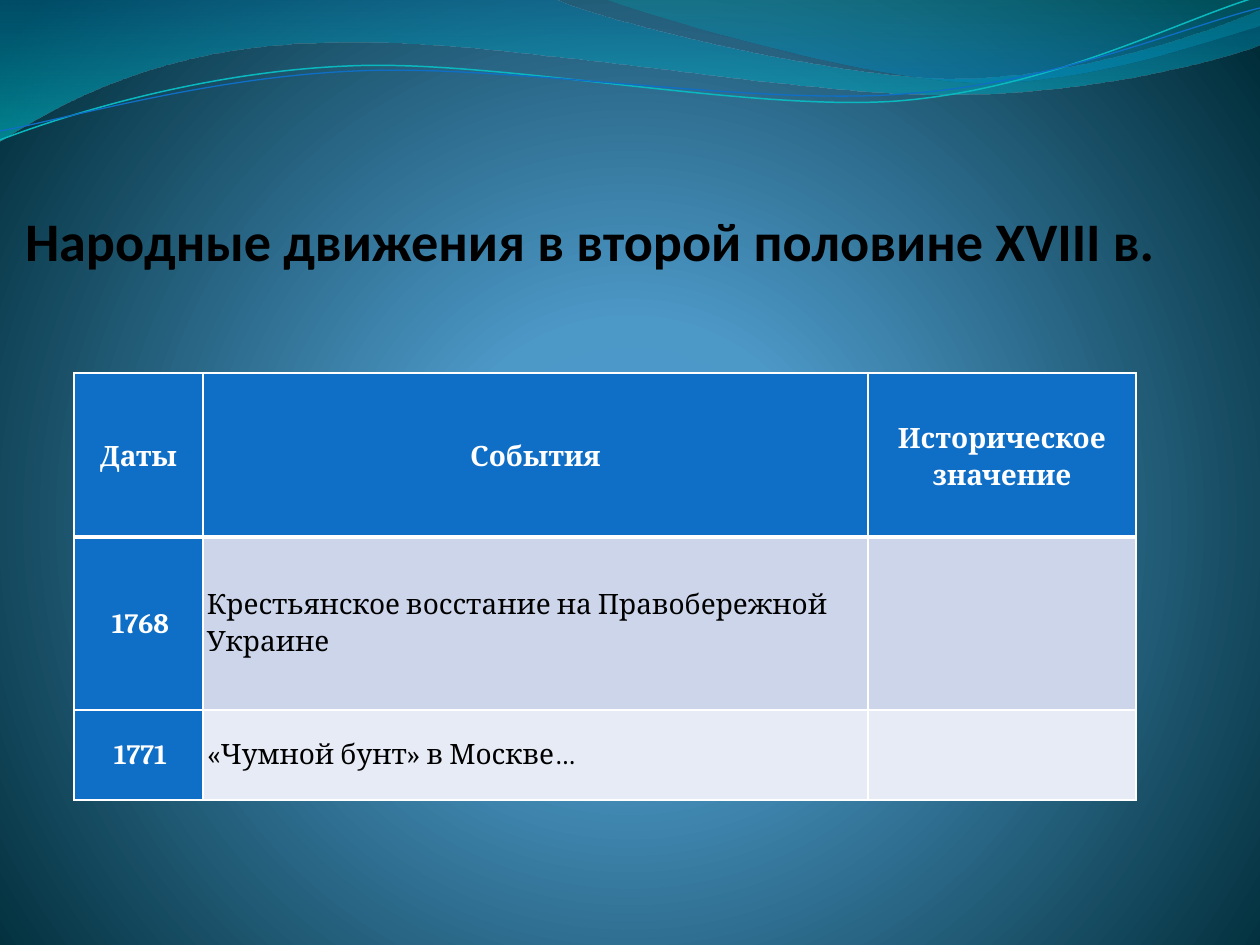
from math import cos, radians, sin

from lxml.etree import SubElement
from pptx import Presentation
from pptx.dml.color import RGBColor as RGB
from pptx.enum.text import MSO_ANCHOR as Anchor, PP_ALIGN as Align
from pptx.oxml import parse_xml
from pptx.oxml.ns import nsdecls, qn
from pptx.util import Emu, Pt

SCALE = 914400 / 126
TILT = 357.3

BLACK = RGB(0x00, 0x00, 0x00)
WHITE = RGB(0xFF, 0xFF, 0xFF)
BLUE = RGB(0x0F, 0x6F, 0xC6)
TEAL = RGB(0x0A, 0xB8, 0xBF)
PALE = RGB(0xCC, 0xD5, 0xEA)
LIGHT = RGB(0xE7, 0xEB, 0xF5)
SKY = RGB(0x4A, 0xA0, 0xD6)
STEEL = RGB(0x4C, 0x98, 0xC7)
NIGHT = RGB(0x00, 0x2C, 0x38)
OCEAN = RGB(0x00, 0x74, 0xA1)
CYAN = RGB(0x00, 0xC6, 0xCF)
LAGOON = RGB(0x00, 0xA1, 0xA9)
AZURE = RGB(0x00, 0x8B, 0xBF)

DOWN = '<a:lin ang="5400000" scaled="0"/>'
GLOW = ('<a:path path="circle"><a:fillToRect l="10000" t="110000" '
        'r="10000" b="100000"/></a:path>')

# Each has a box and an outline: a start, then lines (2 numbers) and curves (6).
WAVES = [
    ((-1, -1, 1262, 144),
     [(0, 0), (554, -1), (600, 21, 837, 79, 955, 79),
      (1075, 79, 1207, 33, 1260, 11), (1261, 45),
      (1239, 55, 1096, 96, 940, 95), (784, 95, 481, 35, 324, 43),
      (163, 45, 58, 105, -1, 142), (0, 0)],
     [(0, OCEAN, 45), (100, CYAN, 55)]),
    ((604, -1, 656, 88),
     [(604, -1), (641, 14, 859, 78, 969, 82),
      (1079, 87, 1211, 40, 1260, 26), (1260, 0), (604, -1)],
     [(0, LAGOON, 30), (80, AZURE, 45)]),
]
LINES = [
    ((-3, 28, 1263, 89),
     [(0, 140), (60, 117, 199, 72, 349, 66), (498, 59, 747, 112, 898, 101),
      (1050, 89, 1182, 19, 1257, -3)], TEAL, 0.85),
    ((-3, 38, 1264, 73),
     [(0, 131), (59, 121, 207, 77, 357, 71), (508, 64, 752, 106, 903, 94),
      (1053, 84, 1186, 26, 1260, 8)], BLUE, 0.75),
]
COLS = [129, 665, 268]
HEIGHTS = [164, 173, 90]
ROWS = [
    ["Даты", "События", "Историческое значение"],
    ["1768", "Крестьянское восстание на Правобережной Украине", ""],
    ["1771", "«Чумной бунт» в Москве…", ""],
]


def px(n):
    return Emu(round(n * SCALE))


def local(x, y, box, turn):
    """Place a slide point in a box that will be turned by some degrees."""
    left, top, w, h = box
    dx, dy = x - left - w / 2, y - top - h / 2
    c, s = cos(radians(turn)), sin(radians(turn))
    return px(dx * c + dy * s + w / 2), px(dy * c - dx * s + h / 2)


def blend(fill, root, stops, course):
    """Give a fill its gradient stops (place, colour, opacity) and course."""
    fill.gradient()
    old = next(root.iter(qn("a:gradFill")))
    marks = "".join(
        f'<a:gs pos="{at * 1000}"><a:srgbClr val="{tint}">'
        f'<a:alpha val="{alpha * 1000}"/></a:srgbClr></a:gs>'
        for at, tint, alpha in stops)
    new = parse_xml(f'<a:gradFill {nsdecls("a")} rotWithShape="1">'
                    f'<a:gsLst>{marks}</a:gsLst>{course}</a:gradFill>')
    old.getparent().replace(old, new)


def write(frame, text, font="Cambria", size=16, color=BLACK, bold=False,
          align=Align.LEFT, gap=1.15, after=7.5):
    para = frame.paragraphs[0]
    para.alignment = align
    para.line_spacing = gap
    para.space_after = Pt(after)
    run = para.add_run()
    run.text = text
    run.font.name = font
    run.font.size = Pt(size)
    run.font.bold = bold
    run.font.color.rgb = color


def edge(cell, low):
    """Draw white cell borders, with the lower one low points wide."""
    props = cell._tc.get_or_add_tcPr()
    for i, side in enumerate("LRTB"):
        width = Pt(low if side == "B" else 1)
        line = SubElement(props, qn(f"a:ln{side}"), w=str(width))
        fill = SubElement(line, qn("a:solidFill"))
        SubElement(fill, qn("a:srgbClr"), val=str(WHITE))
        props.insert(i, line)


class Deck:
    def __init__(self, wide, high):
        self.file = Presentation()
        self.file.slide_width = px(wide)
        self.file.slide_height = px(high)
        self.slide = self.file.slides.add_slide(self.file.slide_layouts[6])
        self.shapes = self.slide.shapes

    def ground(self, stops):
        blend(self.slide.background.fill, self.slide.element, stops, GLOW)

    def outline(self, box, path, turn=0):
        """Build a freeform whose six-number segments are true curves."""
        x, y, w, h = map(px, box)
        ends = [local(*seg[-2:], box, turn) for seg in path]
        pen = self.shapes.build_freeform(*ends[0], scale=1.0)
        pen.add_line_segments(ends[1:], close=path[0] == path[-1])
        shape = pen.convert_to_shape()
        shape.left, shape.top, shape.width, shape.height = x, y, w, h
        shape.rotation = turn
        shape.shadow.inherit = False
        track = next(shape.element.iter(qn("a:path")))
        track.set("w", str(w))
        track.set("h", str(h))
        for node, seg in zip(list(track), path):
            for old in list(node):
                node.remove(old)
            if len(seg) == 6:
                node.tag = qn("a:cubicBezTo")
            for i in range(0, len(seg), 2):
                a, b = local(seg[i], seg[i + 1], box, turn)
                SubElement(node, qn("a:pt"), x=str(a), y=str(b))
        return shape

    def wave(self, box, path, stops):
        shape = self.outline(box, path)
        blend(shape.fill, shape.element, stops, DOWN)
        shape.line.fill.background()

    def line(self, box, path, color, width):
        shape = self.outline(box, path, TILT)
        shape.fill.background()
        shape.line.color.rgb = color
        shape.line.width = Pt(width)

    def title(self, text, x, y, w, h, low):
        """Set a heading that stands low px above the foot of its box."""
        box = self.shapes.add_textbox(px(x), px(y), px(w), px(h))
        frame = box.text_frame
        frame.word_wrap = True
        frame.vertical_anchor = Anchor.BOTTOM
        frame.margin_left = frame.margin_top = 0
        frame.margin_right = px(3)
        frame.margin_bottom = px(low)
        write(frame, text, font="Calibri", size=31, bold=True, gap=1, after=0)

    def table(self, rows, x, y, cols, heights):
        grid = self.shapes.add_table(len(rows), len(cols), px(x), px(y),
                                     px(sum(cols)), px(sum(heights))).table
        for col, wide in zip(grid.columns, cols):
            col.width = px(wide)
        for r, (row, high) in enumerate(zip(rows, heights)):
            grid.rows[r].height = px(high)
            for c, text in enumerate(row):
                self.cell(grid.cell(r, c), text, r, c)

    def cell(self, cell, text, r, c):
        head = r == 0 or c == 0
        cell.fill.solid()
        cell.fill.fore_color.rgb = BLUE if head else (LIGHT, PALE)[r % 2]
        edge(cell, 1 if r else 3)
        if not text:
            return
        cell.vertical_anchor = Anchor.MIDDLE
        cell.margin_top = cell.margin_right = 0
        cell.margin_left = cell.margin_bottom = px(4 if r else 0)
        write(cell.text_frame, text, bold=head,
              color=WHITE if head else BLACK,
              align=Align.CENTER if head else Align.LEFT)


def main():
    deck = Deck(1260, 945)
    deck.ground([(0, SKY, 100), (25, STEEL, 100), (100, NIGHT, 100)])
    for wave in WAVES:
        deck.wave(*wave)
    for line in LINES:
        deck.line(*line)
    deck.title("Народные движения в второй половине ХVIII в.",
               25, 135, 1150, 208, 76)
    deck.table(ROWS, 74, 373, COLS, HEIGHTS)
    deck.file.save("out.pptx")


if __name__ == "__main__":
    main()
